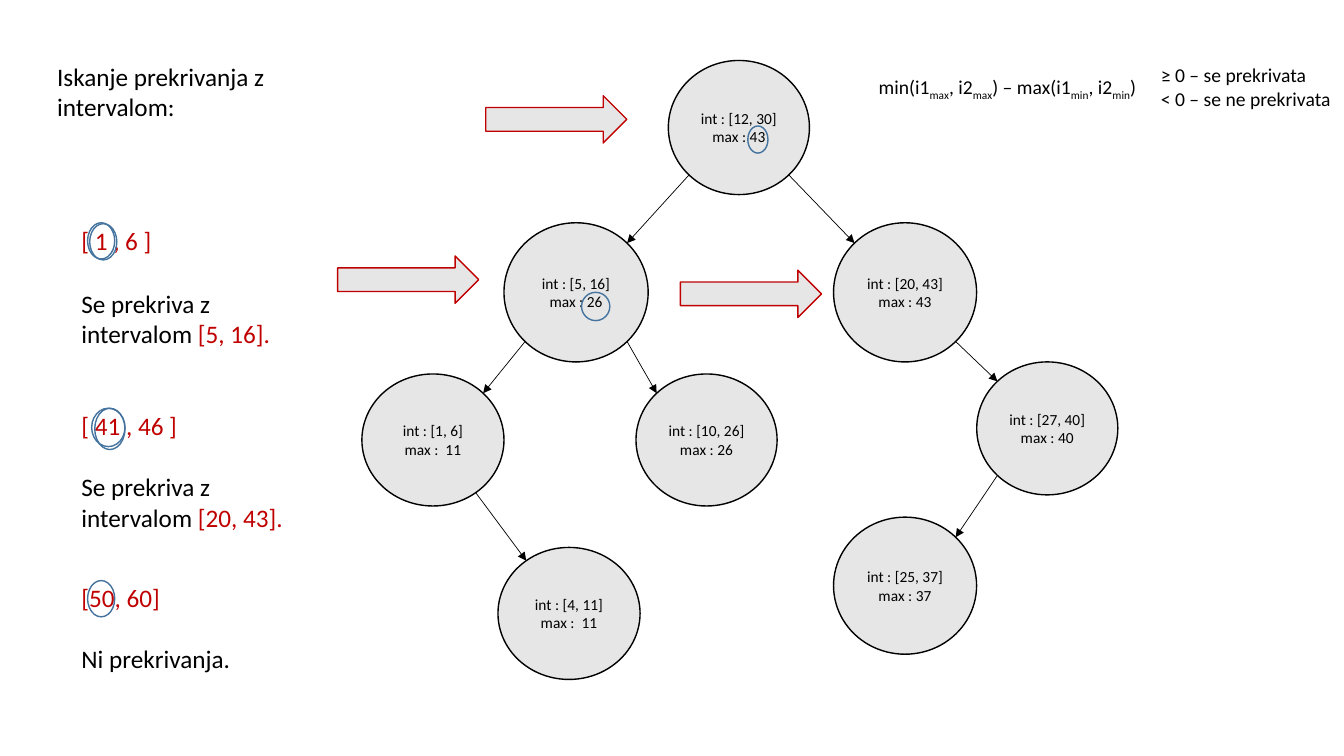
from math import cos, radians, sin

from lxml.etree import SubElement
from pptx import Presentation
from pptx.dml.color import RGBColor
from pptx.enum.shapes import MSO_CONNECTOR as Connector, MSO_SHAPE as Preset
from pptx.enum.text import MSO_ANCHOR as Anchor, MSO_AUTO_SIZE as AutoSize, PP_ALIGN as Align
from pptx.oxml.ns import qn
from pptx.util import Pt

BLACK, RED, BLUE, GREY = "000000", "C00000", "43739E", "E7E6E6"

# Tree nodes: interval -> (max label, box)
NODES = {
    "[12, 30]": ("43", (477.4, 43.2, 100.8, 95.8)),
    "[5, 16]": ("26", (360, 159.1, 103, 99.4)),
    "[20, 43]": ("43", (595.4, 159.1, 102.2, 99.4)),
    "[1, 6]": (" 11", (258.5, 267.1, 101.5, 94.3)),
    "[10, 26]": ("26", (454.3, 267.1, 100.8, 94.3)),
    "[27, 40]": ("40", (697.7, 258.5, 100.8, 95)),
    "[25, 37]": ("37", (595.4, 369.4, 102.2, 97.9)),
    "[4, 11]": (" 11", (355.7, 391, 101.5, 94.3)),
}
# Tree edges: parent, child, angle below the horizontal at which the edge leaves
EDGES = [
    ("[12, 30]", "[5, 16]", 45), ("[12, 30]", "[20, 43]", 45),
    ("[5, 16]", "[1, 6]", 45), ("[5, 16]", "[10, 26]", 45),
    ("[20, 43]", "[27, 40]", 45), ("[27, 40]", "[25, 37]", 45),
    ("[1, 6]", "[4, 11]", 53),
]
# Search steps: top, query, query width, result runs, result top offset, result width
SEARCHES = [
    (157.7, "[ 1 , 6 ]", 67, [("Se prekriva z intervalom ", BLACK), ("[5, 16].", RED)], 44.6, 175),
    (289.4, "[ 41 , 46 ]", 86.4, [("Se prekriva z intervalom ", BLACK), ("[20, 43].", RED)], 44, 175),
    (412.6, "[50, 60]", 92.9, [("Ni prekrivanja.", BLACK)], 43.2, 144.7),
]
POINTERS = [(347, 68.4), (241.2, 182.9), (486, 193)]
RINGS = [
    (64.1, 159.8, 19.4, 25.9), (62.6, 159.1, 19.4, 25.9),
    (65.5, 291.6, 23.8, 27.4), (67.7, 291.6, 21.6, 29.5),
    (62.6, 414.7, 19.4, 25.9),
    (534.2, 90, 14.4, 19.4), (415.4, 208.8, 20.2, 20.2),
]


def color(value):
    return RGBColor.from_string(value)


def add_run(paragraph, text, size, value=BLACK, subscript=False):
    run = paragraph.add_run()
    run.text = text
    run.font.name = "Calibri"
    run.font.size = Pt(size)
    run.font.color.rgb = color(value)
    if subscript:
        run.font._element.set("baseline", "-25000")


def add_text(slide, box, paragraphs, size):
    """Each paragraph is a list of runs: (text, colour[, subscript])."""
    frame = slide.shapes.add_textbox(*map(Pt, box)).text_frame
    frame.word_wrap = True
    frame.auto_size = AutoSize.SHAPE_TO_FIT_TEXT
    for index, runs in enumerate(paragraphs):
        paragraph = frame.add_paragraph() if index else frame.paragraphs[0]
        for text, *style in runs:
            add_run(paragraph, text, size, *style)


def add_preset(slide, preset, box, line, fill=None):
    shape = slide.shapes.add_shape(preset, *map(Pt, box))
    shape.shadow.inherit = False
    if fill:
        shape.fill.solid()
        shape.fill.fore_color.rgb = color(fill)
    else:
        shape.fill.background()
    shape.line.color.rgb = color(line)
    shape.line.width = Pt(1)
    return shape


def add_node(slide, interval, maximum, box):
    frame = add_preset(slide, Preset.OVAL, box, BLACK, GREY).text_frame
    frame.word_wrap = True
    frame.vertical_anchor = Anchor.MIDDLE
    for index, text in enumerate((f"int : {interval}", f"max : {maximum}")):
        paragraph = frame.add_paragraph() if index else frame.paragraphs[0]
        paragraph.alignment = Align.CENTER
        add_run(paragraph, text, 11)


def rim_point(box, across, down, angle):
    """Point on the ellipse in box; across and down are -1 or 1."""
    left, top, width, height = box
    return (left + width / 2 * (1 + across * cos(radians(angle))),
            top + height / 2 * (1 + down * sin(radians(angle))))


def add_edge(slide, parent, child, angle):
    side = 1 if child[0] > parent[0] else -1
    ends = rim_point(parent, side, 1, angle) + rim_point(child, -side, -1, angle)
    edge = slide.shapes.add_connector(Connector.STRAIGHT, *map(Pt, ends))
    edge.line.color.rgb = color(BLACK)
    edge.line.width = Pt(0.5)
    SubElement(edge.line._get_or_add_ln(), qn("a:tailEnd"), type="triangle")
    SubElement(edge._element.spPr, qn("a:effectLst"))


def add_tree(slide):
    for interval, (maximum, box) in NODES.items():
        add_node(slide, interval, maximum, box)
    for parent, child, angle in EDGES:
        add_edge(slide, NODES[parent][1], NODES[child][1], angle)


def add_searches(slide, left):
    for top, query, width, result, offset, result_width in SEARCHES:
        add_text(slide, (left, top, width, 29), [[(query, RED)]], 18)
        add_text(slide, (left, top + offset, result_width, 51 if len(result) > 1 else 29), [result], 18)


def add_formula(slide, left, top):
    parts = ["min(i1", "max", ", i2", "max", ") – max(i1", "min", ", i2", "min", ")"]
    runs = [(part, BLACK, index % 2 == 1) for index, part in enumerate(parts)]
    add_text(slide, (left, top, 234.7, 24.5), [runs], 14)
    outcomes = ["≥ 0 – se prekrivata", "< 0 – se ne prekrivata"]
    add_text(slide, (left + 201.6, top - 8, 138, 63), [[(text, BLACK)] for text in outcomes], 14)


def add_marks(slide):
    for left, top in POINTERS:
        add_preset(slide, Preset.RIGHT_ARROW, (left, top, 100.8, 33.8), RED, GREY)
    for box in RINGS:
        add_preset(slide, Preset.OVAL, box, BLUE)


def main():
    presentation = Presentation()
    presentation.slide_width, presentation.slide_height = Pt(960), Pt(540)
    slide = presentation.slides.add_slide(presentation.slide_layouts[6])
    add_tree(slide)
    add_text(slide, (33.8, 40.3, 185, 51), [[("Iskanje prekrivanja z intervalom:", BLACK)]], 18)
    add_searches(slide, 51.1)
    add_formula(slide, 620.6, 49.7)
    add_marks(slide)
    presentation.save("out.pptx")


if __name__ == "__main__":
    main()
